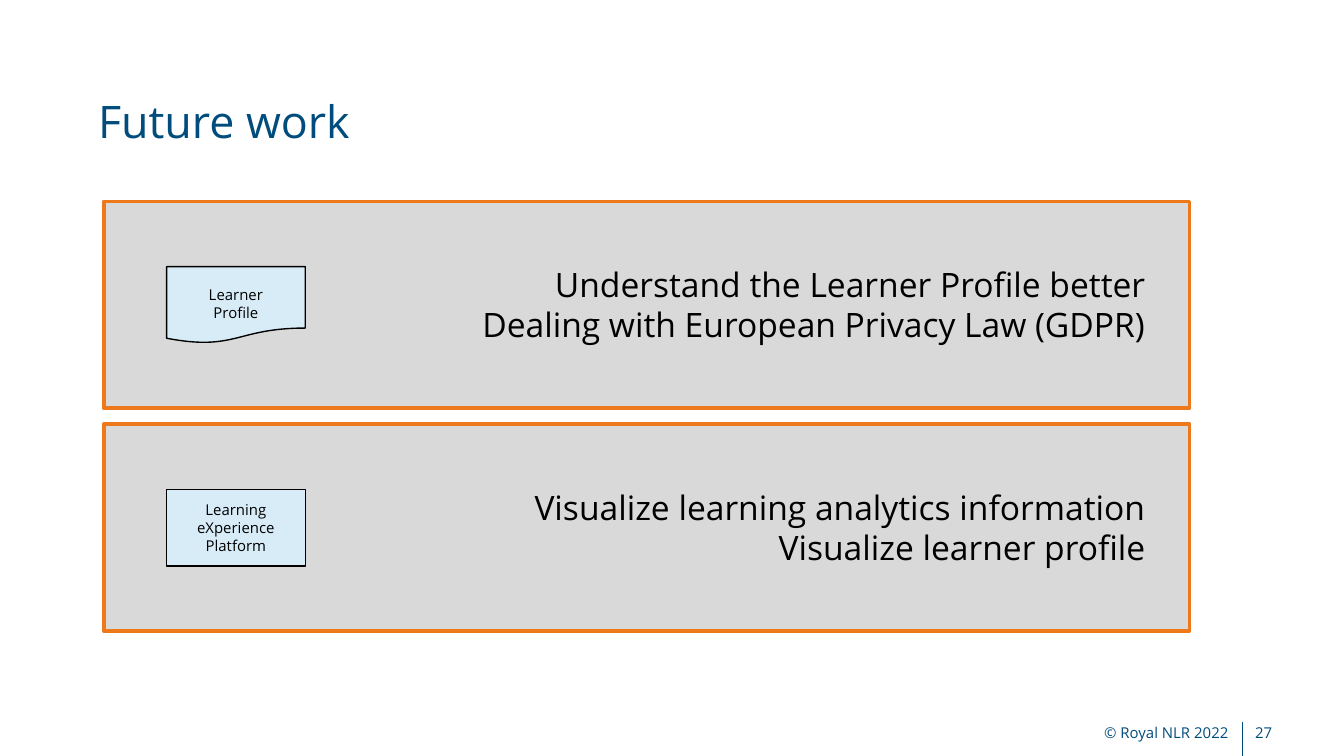
from pptx import Presentation
from pptx.dml.color import RGBColor
from pptx.enum.shapes import MSO_CONNECTOR, MSO_SHAPE
from pptx.enum.text import MSO_ANCHOR, PP_ALIGN
from pptx.oxml.ns import qn
from pptx.util import Cm, Pt
from lxml.etree import SubElement

TITLE = "Future work"
PANELS = [
    {"icon": MSO_SHAPE.FLOWCHART_DOCUMENT,
     "anchor": MSO_ANCHOR.BOTTOM,
     "label": ["Learner", "Profile"],
     "goals": ["Understand the Learner Profile better",
               "Dealing with European Privacy Law (GDPR)"]},
    {"icon": MSO_SHAPE.FLOWCHART_PROCESS,
     "anchor": MSO_ANCHOR.MIDDLE,
     "label": ["Learning eXperience Platform"],
     "goals": ["Visualize learning analytics information",
               "Visualize learner profile"]},
]
FOOTER = "© Royal NLR 2022"
PAGE = "27"

THEME = {
    "font": "Open Sans",
    "blue": RGBColor.from_string("004D7D"),
    "black": RGBColor.from_string("000000"),
    "grey": RGBColor.from_string("D9D9D9"),
    "orange": RGBColor.from_string("ED791A"),
    "pale": RGBColor.from_string("D8ECF8"),
    "title": Pt(24), "body": Pt(18), "small": Pt(8),
}

# Lengths in centimetres
WIDE, HIGH = 25.4, 14.29
LEFT, TOP = 1.96, 3.81
PANEL_W, PANEL_H, GAP = 20.52, 3.91, 0.3
ICON_X, ICON_W, ICON_H = 3.15, 2.62, 1.45
GOAL_X, GOAL_W, GOAL_H = 4.78, 17.12, 1.8
RULE_X, RULE_Y = 23.47, 13.64
FOOT_Y, FOOT_H, FOOT_W, PAGE_W = 13.46, 0.76, 12.29, 1.17


def write(shape, lines, size, color, align, anchor):
    frame = shape.text_frame
    frame.word_wrap = True
    frame.vertical_anchor = anchor
    frame.text = "\n".join(lines)
    for para in frame.paragraphs:
        para.alignment = align
        para.font.name = THEME["font"]
        para.font.size = THEME[size]
        para.font.color.rgb = THEME[color]


def add_box(slide, kind, place, fill, line, width):
    box = slide.shapes.add_shape(kind, *map(Cm, place))
    box.shadow.inherit = False
    box.fill.solid()
    box.fill.fore_color.rgb = THEME[fill]
    box.line.color.rgb = THEME[line]
    box.line.width = Pt(width)
    return box


def add_text(slide, place, *style):
    write(slide.shapes.add_textbox(*map(Cm, place)), *style)


def add_panel(slide, top, panel):
    add_box(slide, MSO_SHAPE.RECTANGLE, (LEFT, top, PANEL_W, PANEL_H),
            "grey", "orange", 2)
    goal_y = top + (PANEL_H - GOAL_H) / 2
    add_text(slide, (GOAL_X, goal_y, GOAL_W, GOAL_H), panel["goals"],
             "body", "black", PP_ALIGN.RIGHT, MSO_ANCHOR.TOP)
    icon_y = top + (PANEL_H - ICON_H) / 2
    icon = add_box(slide, panel["icon"], (ICON_X, icon_y, ICON_W, ICON_H),
                   "pale", "black", 0.75)
    write(icon, panel["label"], "small", "black",
          PP_ALIGN.CENTER, panel["anchor"])


def add_footer(slide):
    rule = slide.shapes.add_connector(
        MSO_CONNECTOR.STRAIGHT, Cm(RULE_X), Cm(RULE_Y), Cm(RULE_X), Cm(HIGH))
    rule.line.color.rgb = THEME["blue"]
    rule.line.width = Pt(0.25)
    SubElement(rule._element.spPr, qn("a:effectLst"))
    add_text(slide, (RULE_X - FOOT_W, FOOT_Y, FOOT_W, FOOT_H), [FOOTER],
             "small", "blue", PP_ALIGN.RIGHT, MSO_ANCHOR.MIDDLE)
    add_text(slide, (RULE_X, FOOT_Y, PAGE_W, FOOT_H), [PAGE],
             "small", "blue", PP_ALIGN.LEFT, MSO_ANCHOR.MIDDLE)


def main():
    deck = Presentation()
    deck.slide_width, deck.slide_height = Cm(WIDE), Cm(HIGH)
    slide = deck.slides.add_slide(deck.slide_layouts[5])

    title = slide.shapes.title
    title.left, title.top = Cm(1.6), Cm(1.65)
    title.width, title.height = Cm(20.29), Cm(1.27)
    write(title, [TITLE], "title", "blue", PP_ALIGN.LEFT, MSO_ANCHOR.TOP)

    for row, panel in enumerate(PANELS):
        add_panel(slide, TOP + row * (PANEL_H + GAP), panel)
    add_footer(slide)
    deck.save("out.pptx")


if __name__ == "__main__":
    main()
